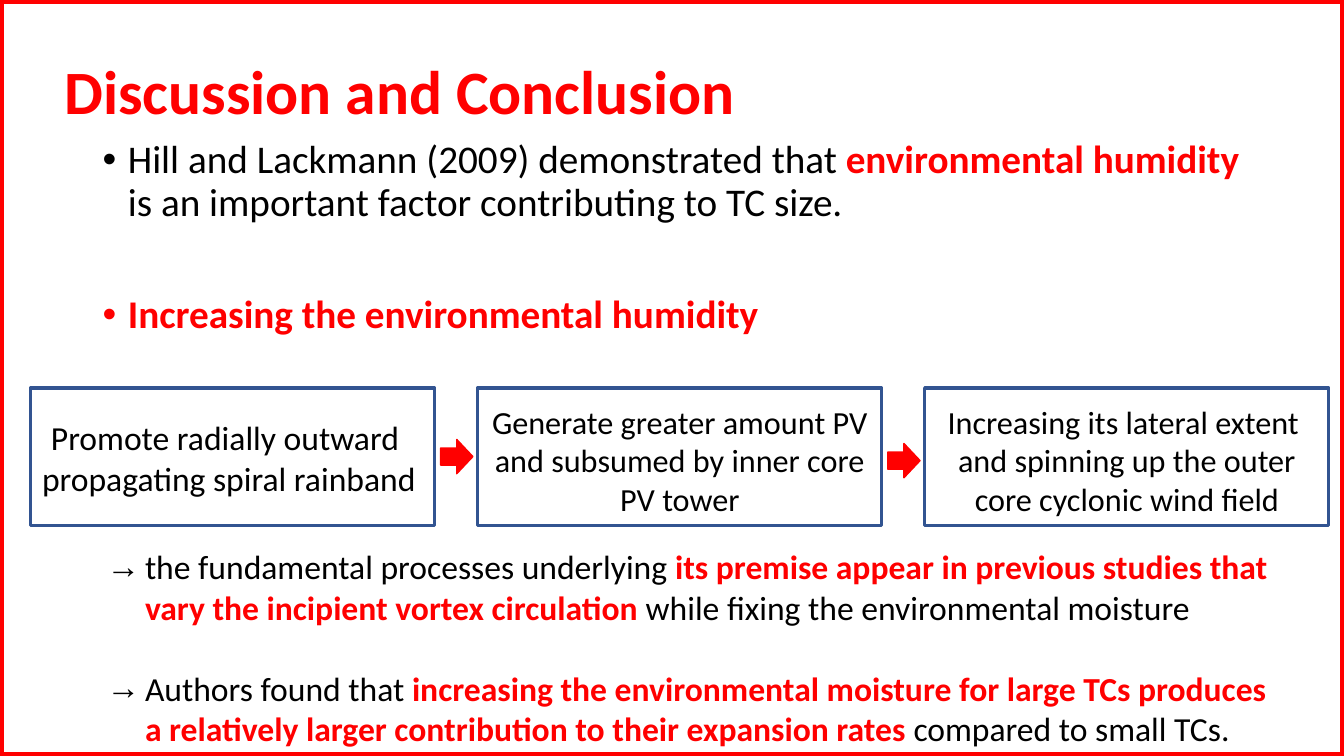
from lxml.etree import SubElement
from pptx import Presentation
from pptx.dml.color import RGBColor
from pptx.enum.shapes import MSO_SHAPE as Shape
from pptx.enum.text import MSO_ANCHOR as Anchor, PP_ALIGN as Align
from pptx.oxml.ns import qn
from pptx.util import Inches, Pt

RED = RGBColor(0xFF, 0x00, 0x00)
BLACK = RGBColor(0x00, 0x00, 0x00)
BLUE = RGBColor(0x32, 0x54, 0x91)
FONT = "Calibri"

presentation = Presentation()
presentation.slide_width = Inches(13.33)
presentation.slide_height = Inches(7.5)
slide = presentation.slides.add_slide(presentation.slide_layouts[6])


def add_text(box, paragraphs, size, align=Align.LEFT, wrap=True, spacing=1.0,
             before=(), bullet=None, indent=0.0):
    """Add a text box; each paragraph is a list of (text, is_key) runs, key runs being bold red."""
    frame = slide.shapes.add_textbox(*map(Inches, box)).text_frame
    frame.word_wrap = wrap
    frame.vertical_anchor = Anchor.TOP
    for index, runs in enumerate(paragraphs):
        paragraph = frame.paragraphs[0] if index == 0 else frame.add_paragraph()
        paragraph.alignment = align
        paragraph.line_spacing = spacing
        if before:
            paragraph.space_before = Pt(before[index])
        if bullet:
            properties = paragraph._p.get_or_add_pPr()
            properties.set("marL", str(Inches(indent)))
            properties.set("indent", str(-Inches(indent)))
            SubElement(properties, qn("a:buFont")).set("typeface", "Arial")
            SubElement(properties, qn("a:buChar")).set("char", bullet)
        for text, is_key in runs:
            run = paragraph.add_run()
            run.text = text
            run.font.name = FONT
            run.font.size = Pt(size)
            run.font.bold = is_key
            run.font.color.rgb = RED if is_key else BLACK


def add_outlined(kind, box, line, width, fill=None):
    shape = slide.shapes.add_shape(kind, *map(Inches, box))
    shape.shadow.inherit = False
    shape.line.color.rgb = line
    shape.line.width = Pt(width)
    if fill is None:
        shape.fill.background()
    else:
        shape.fill.solid()
        shape.fill.fore_color.rgb = fill


add_text((0.54, 0.56, 11.5, 1.45), [[("Discussion and Conclusion", True)]], 44, spacing=0.9)

add_outlined(Shape.RECTANGLE, (0, 0, 13.33, 7.5), RED, 6)

findings = [
    [("Hill and Lackmann (2009) demonstrated that ", False),
     ("environmental humidity ", True),
     ("is an important factor contributing to TC size.", False)],
    [("Increasing the environmental humidity", True)],
]
add_text((0.92, 1.34, 11.5, 5.5), findings, 28, spacing=0.9, before=(10, 50),
         bullet="•", indent=0.25)

# Chain of processes: text box, size and lines of each step
steps = [
    ((0.3, 4.09, 3.94, 0.91), 24,
     ["Promote radially outward ", "propagating spiral rainband"]),
    ((4.76, 3.94, 3.97, 1.26), 23,
     ["Generate greater amount PV", "and subsumed by inner core", " PV tower "]),
    ((9.28, 3.94, 3.8, 1.26), 23,
     ["Increasing its lateral extent ", "and spinning up the outer", "core cyclonic wind field"]),
]
STEP_LEFT, STEP_PITCH = 0.3, 4.435
for index, (text_box, size, lines) in enumerate(steps):
    left = STEP_LEFT + index * STEP_PITCH
    add_outlined(Shape.RECTANGLE, (left, 3.85, 4.01, 1.36), BLUE, 2.25)
    add_text(text_box, [[(line, False)] for line in lines], size,
             align=Align.CENTER, wrap=False)

for index, top in enumerate((4.36, 4.4)):
    left = 4.37 + index * STEP_PITCH
    add_outlined(Shape.RIGHT_ARROW, (left, top, 0.32, 0.34), RED, 1, fill=RED)

conclusions = [
    [("the fundamental processes underlying ", False),
     ("its premise appear in previous studies that vary the incipient vortex circulation ", True),
     ("while fixing the environmental moisture", False)],
    [("Authors found that ", False),
     ("increasing the environmental moisture for large TCs produces "
      "a relatively larger contribution to their expansion rates ", True),
     ("compared to small TCs.", False)],
]
add_text((0.96, 5.37, 11.91, 2.12), conclusions, 24, before=(0, 29),
         bullet="→", indent=0.38)

presentation.save("out.pptx")
